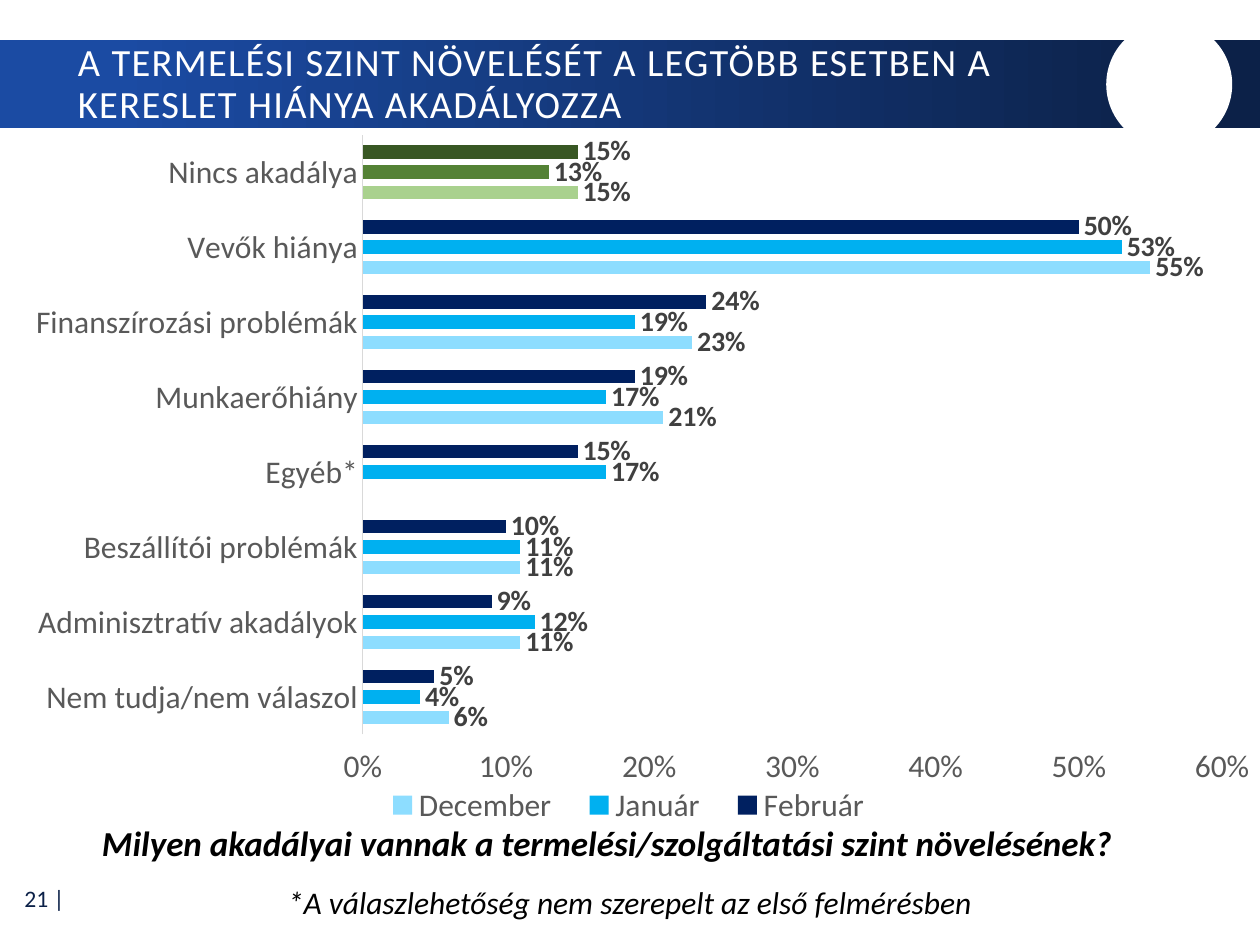
import dataclasses

import lxml.etree
import pptx
import pptx.chart.data
import pptx.dml.color
import pptx.enum.chart
import pptx.enum.shapes
import pptx.enum.text
import pptx.oxml
import pptx.oxml.ns
import pptx.util

Inches = pptx.util.Inches
Pt = pptx.util.Pt
Align = pptx.enum.text.PP_ALIGN
Anchor = pptx.enum.text.MSO_ANCHOR
Shape = pptx.enum.shapes.MSO_SHAPE
ChartKind = pptx.enum.chart


@dataclasses.dataclass(frozen=True)
class Theme:
    font: str = "Calibri"
    white: str = "FFFFFF"
    black: str = "000000"
    band_start: str = "1B4BA3"
    navy: str = "0C2148"
    axis_text: str = "595959"
    axis_line: str = "D9D9D9"
    label_text: str = "404040"
    title_size: float = 22
    question_size: float = 20
    body_size: float = 18
    label_size: float = 16
    number_size: float = 13.5


CATEGORIES = [
    "Nincs akadálya", "Vevők hiánya", "Finanszírozási problémák", "Munkaerőhiány",
    "Egyéb*", "Beszállítói problémák", "Adminisztratív akadályok", "Nem tudja/nem válaszol",
]
SERIES = [
    ("Február", [0.15, 0.5, 0.24, 0.19, 0.15, 0.1, 0.09, 0.05], "002060", "385723"),
    ("Január", [0.13, 0.53, 0.19, 0.17, 0.17, 0.11, 0.12, 0.04], "00B0F0", "548235"),
    ("December", [0.15, 0.55, 0.23, 0.21, None, 0.11, 0.11, 0.06], "8DDDFF", "A9D18E"),
]


def color(value):
    return pptx.dml.color.RGBColor.from_string(value)


class SlideBuilder:
    """Draws styled elements on the current slide."""

    def __init__(self, page, theme):
        self.page = page
        self.theme = theme

    def style(self, font, size, hue, bold=False, italic=False):
        font.name = self.theme.font
        font.size = Pt(size)
        font.bold = bold
        font.italic = italic
        font.color.rgb = color(hue)

    def shape(self, kind, left, top, width, height):
        shape = self.page.shapes.add_shape(
            kind, Inches(left), Inches(top), Inches(width), Inches(height))
        shape.shadow.inherit = False
        shape.line.fill.background()
        return shape

    def band(self, left, top, width, height):
        fill = self.shape(Shape.RECTANGLE, left, top, width, height).fill
        fill.gradient()
        fill.gradient_angle = 0
        stops = [(0.09, self.theme.band_start), (0.95, self.theme.navy)]
        for stop, (position, hue) in zip(fill.gradient_stops, stops):
            stop.position = position
            stop.color.rgb = color(hue)

    def disc(self, left, top, diameter):
        fill = self.shape(Shape.OVAL, left, top, diameter, diameter).fill
        fill.solid()
        fill.fore_color.rgb = color(self.theme.white)

    def text(self, words, left, top, width, height, size, hue, align=Align.LEFT,
             anchor=Anchor.TOP, bold=False, italic=False, line_spacing=None, tracking=None):
        box = self.page.shapes.add_textbox(
            Inches(left), Inches(top), Inches(width), Inches(height))
        frame = box.text_frame
        frame.word_wrap = True
        frame.vertical_anchor = anchor
        frame.text = words
        para = frame.paragraphs[0]
        para.alignment = align
        para.line_spacing = line_spacing
        span = para.runs[0]
        self.style(span.font, size, hue, bold, italic)
        if tracking:
            span.font._element.set("spc", str(round(tracking * 100)))

    def bar_chart(self, left, top, width, height, plot_area, legend_area):
        data = pptx.chart.data.CategoryChartData(number_format="0%")
        data.categories = CATEGORIES
        for name, values, _, _ in SERIES:
            data.add_series(name, values)
        chart = self.page.shapes.add_chart(
            ChartKind.XL_CHART_TYPE.BAR_CLUSTERED, Inches(left), Inches(top),
            Inches(width), Inches(height), data).chart
        self.style(chart.font, self.theme.body_size, self.theme.black)
        chart.has_title = False
        chart.has_legend = True
        chart.legend.position = ChartKind.XL_LEGEND_POSITION.BOTTOM
        chart.legend.include_in_layout = False
        self.style(chart.legend.font, self.theme.body_size, self.theme.axis_text)
        self.axes(chart)
        self.bars(chart.plots[0])
        size = (width, height)
        self.place(chart, "plotArea", plot_area, size, [("layoutTarget", "inner")])
        self.place(chart, "legend", legend_area, size)

    def axes(self, chart):
        for axis in (chart.category_axis, chart.value_axis):
            axis.has_major_gridlines = False
            axis.major_tick_mark = ChartKind.XL_TICK_MARK.NONE
            axis.minor_tick_mark = ChartKind.XL_TICK_MARK.NONE
            self.style(axis.tick_labels.font, self.theme.body_size, self.theme.axis_text)
        chart.category_axis.reverse_order = True
        line = chart.category_axis.format.line
        line.color.rgb = color(self.theme.axis_line)
        line.width = Pt(0.75)
        scale = chart.value_axis
        scale.minimum_scale, scale.maximum_scale, scale.major_unit = 0, 0.6, 0.1
        scale.tick_label_position = ChartKind.XL_TICK_LABEL_POSITION.HIGH
        scale.format.line.fill.background()
        scale.tick_labels.number_format = "0%"
        scale.tick_labels.number_format_is_linked = False

    def bars(self, plot):
        plot.gap_width = 150
        plot.overlap = -50
        plot.vary_by_categories = False
        for series, (_, _, hue, first_hue) in zip(plot.series, SERIES):
            series.invert_if_negative = False
            for target, tint in ((series, hue), (series.points[0], first_hue)):
                target.format.fill.solid()
                target.format.fill.fore_color.rgb = color(tint)
            labels = series.data_labels
            labels.show_value = True
            labels.number_format = "0%"
            labels.number_format_is_linked = False
            labels.position = ChartKind.XL_LABEL_POSITION.OUTSIDE_END
            self.style(labels.font, self.theme.label_size, self.theme.label_text, bold=True)

    def place(self, chart, part, area, size, extra=()):
        qn = pptx.oxml.ns.qn
        element = chart._chartSpace.find(".//" + qn("c:" + part))
        layout = element.find(qn("c:layout"))
        if layout is None:
            layout = pptx.oxml.parse_xml("<c:layout %s/>" % pptx.oxml.ns.nsdecls("c"))
            position = element.find(qn("c:legendPos"))
            element.insert(0 if position is None else 1, layout)
        manual = lxml.etree.SubElement(layout, qn("c:manualLayout"))
        settings = [*extra, ("xMode", "edge"), ("yMode", "edge")]
        settings += [(tag, length / whole) for tag, length, whole in zip("xywh", area, size * 2)]
        for tag, value in settings:
            lxml.etree.SubElement(manual, qn("c:" + tag)).set("val", str(value))


def main():
    deck = pptx.Presentation()
    deck.slide_width, deck.slide_height = Inches(10), Inches(7.5)
    theme = Theme()
    builder = SlideBuilder(deck.slides.add_slide(deck.slide_layouts[6]), theme)
    builder.text("21 |", 0.01, 6.94, 0.6, 0.37, theme.number_size, theme.navy,
                 align=Align.RIGHT, anchor=Anchor.MIDDLE)
    builder.band(0, 0.32, 10, 0.7)
    builder.disc(8.78, 0.17, 1)
    builder.text("A TERMELÉSI SZINT NÖVELÉSÉT A LEGTÖBB ESETBEN A KERESLET HIÁNYA AKADÁLYOZZA",
                 0.52, 0.34, 8.32, 0.67, theme.title_size, theme.white,
                 anchor=Anchor.MIDDLE, line_spacing=0.9, tracking=0.8)
    builder.text("Milyen akadályai vannak a termelési/szolgáltatási szint növelésének?",
                 -0.18, 6.47, 10, 0.44, theme.question_size, theme.black,
                 align=Align.CENTER, bold=True, italic=True)
    builder.text("*A válaszlehetőség nem szerepelt az első felmérésben",
                 0, 6.96, 10, 0.4, theme.body_size, theme.black,
                 align=Align.CENTER, italic=True)
    builder.bar_chart(0, 1.01, 10, 5.59, plot_area=(2.88, 0.06, 6.82, 4.76),
                      legend_area=(2.9, 5.18, 4.18, 0.4))
    deck.save("out.pptx")


if __name__ == "__main__":
    main()
